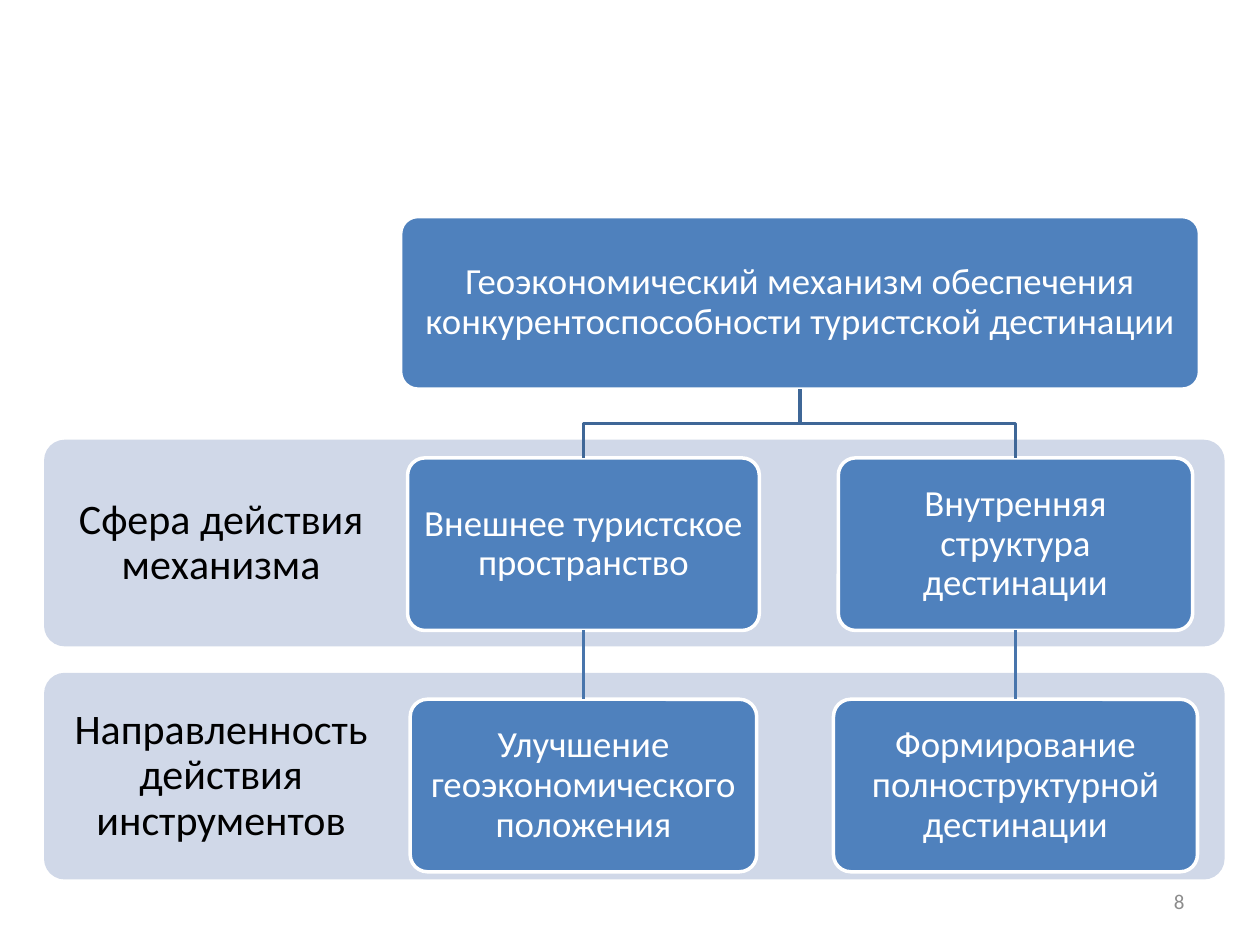
"""Build the slide on the geoeconomic mechanism of a tourist destination."""
from pptx import Presentation
from pptx.dml.color import RGBColor
from pptx.enum.shapes import MSO_CONNECTOR, MSO_SHAPE
from pptx.enum.text import MSO_ANCHOR, PP_ALIGN
from pptx.oxml.ns import qn
from pptx.util import Pt
from lxml.etree import SubElement

WHITE = RGBColor(0xFF, 0xFF, 0xFF)
BLACK = RGBColor(0x00, 0x00, 0x00)
GRAY = RGBColor(0x8C, 0x8C, 0x8C)
BLUE = RGBColor(0x4F, 0x81, 0xBD)
PALE_BLUE = RGBColor(0xD0, 0xD8, 0xE8)
ELBOW_BLUE = RGBColor(0x3F, 0x67, 0x97)
STEM_BLUE = RGBColor(0x48, 0x75, 0xAC)


def write(shape, text, size, color, align=PP_ALIGN.CENTER, inset=6.5, spacing=0.9):
    frame = shape.text_frame
    frame.word_wrap = True
    frame.vertical_anchor = MSO_ANCHOR.MIDDLE
    frame.margin_left = frame.margin_right = Pt(inset)
    frame.margin_top = frame.margin_bottom = Pt(inset)
    para = frame.paragraphs[0]
    para.alignment = align
    para.line_spacing = spacing
    span = para.add_run()
    span.text = text
    span.font.name = "Calibri"
    span.font.size = Pt(size)
    span.font.color.rgb = color


def add_panel(left, top, width, height, fill):
    panel = page.shapes.add_shape(
        MSO_SHAPE.ROUNDED_RECTANGLE, Pt(left), Pt(top), Pt(width), Pt(height))
    panel.adjustments[0] = 0.1
    panel.shadow.inherit = False
    panel.fill.solid()
    panel.fill.fore_color.rgb = fill
    panel.line.fill.background()
    return panel


deck = Presentation()
deck.slide_width, deck.slide_height = Pt(720), Pt(540)
page = deck.slides.add_slide(deck.slide_layouts[6])

number = page.shapes.add_textbox(Pt(516), Pt(500.5), Pt(168), Pt(28.75))
write(number, "8", size=12, color=GRAY, align=PP_ALIGN.RIGHT, inset=7.2, spacing=1)

band_left, band_height = 25.2, 118.1
bands = [
    (251.3, "Сфера действия механизма"),
    (384.5, "Направленность действия инструментов"),
]
for top, text in bands:
    add_panel(band_left, top, 674.6, band_height, PALE_BLUE)
    label = page.shapes.add_textbox(Pt(band_left), Pt(top), Pt(202.4), Pt(band_height))
    write(label, text, size=24, color=BLACK, inset=13.44)

root_center, left_center, right_center = 457.2, 333.4, 580.3
node_height = 98.6
node_tops = [123.8 + 137.9 * level for level in range(3)]
root_bottom, middle_bottom = [top + node_height for top in node_tops[:2]]
bend = (root_bottom + node_tops[1]) / 2

nodes = [
    (root_center, 0, 456.5,
     "Геоэкономический механизм обеспечения конкурентоспособности туристской дестинации"),
    (left_center, 1, 201, "Внешнее туристское пространство"),
    (left_center, 2, 198, "Улучшение геоэкономического положения"),
    (right_center, 1, 202.5, "Внутренняя структура дестинации"),
    (right_center, 2, 208, "Формирование полноструктурной дестинации"),
]
for center, level, width, text in nodes:
    node = add_panel(center - width / 2, node_tops[level], width, node_height, BLUE)
    node.line.color.rgb = WHITE
    node.line.width = Pt(2)
    write(node, text, size=21, color=WHITE)

for center in (left_center, right_center):
    builder = page.shapes.build_freeform(Pt(root_center), Pt(root_bottom))
    corners = [(root_center, bend), (center, bend), (center, node_tops[1])]
    builder.add_line_segments([(Pt(x), Pt(y)) for x, y in corners], close=False)
    elbow = builder.convert_to_shape()
    elbow.shadow.inherit = False
    elbow.fill.background()
    stem = page.shapes.add_connector(
        MSO_CONNECTOR.STRAIGHT, Pt(center), Pt(middle_bottom), Pt(center), Pt(node_tops[2]))
    for link, color in ((elbow, ELBOW_BLUE), (stem, STEM_BLUE)):
        link.line.color.rgb = color
        link.line.width = Pt(2)
    SubElement(stem._element.spPr, qn("a:effectLst"))

deck.save("out.pptx")
